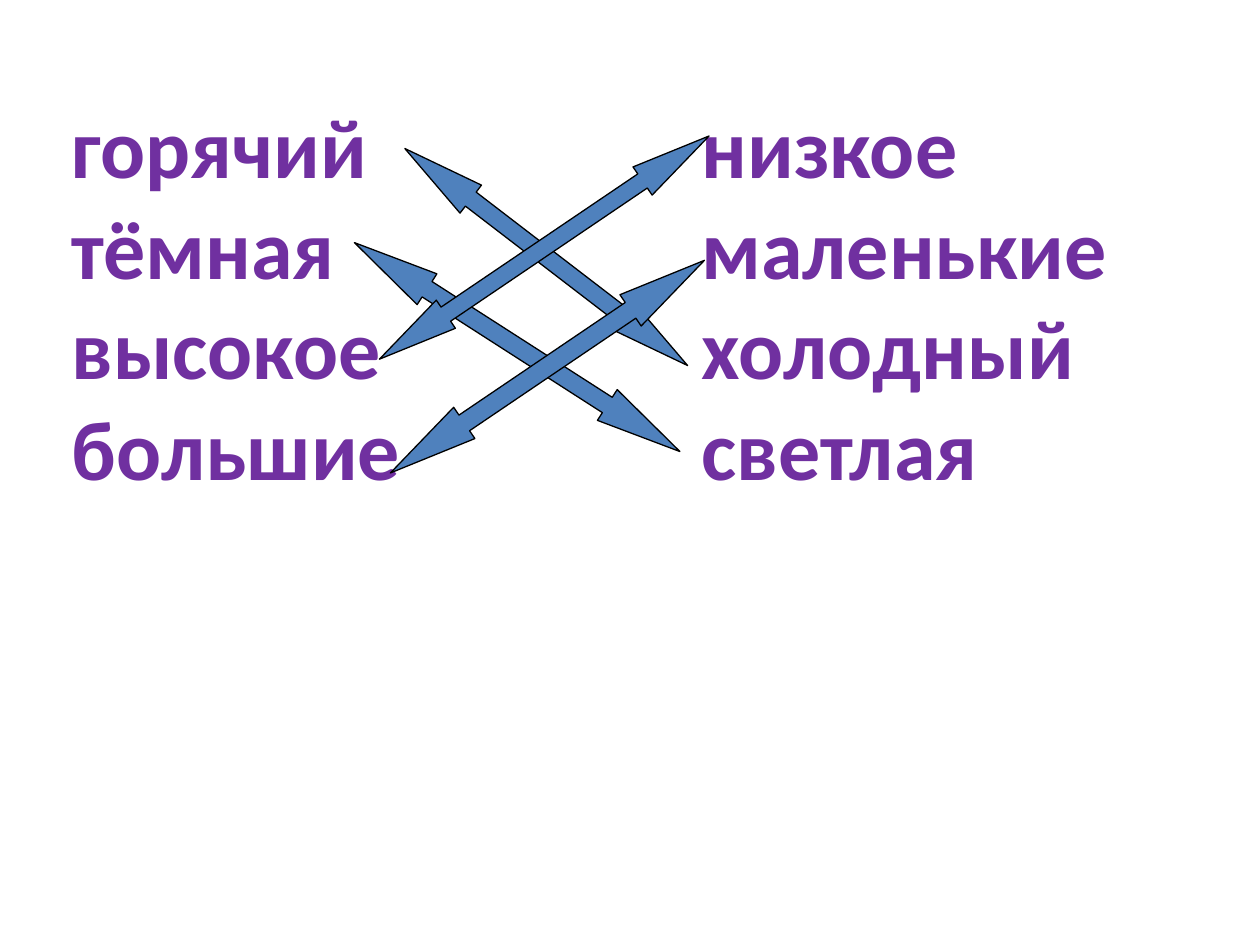
from lxml import etree
from pptx import Presentation
from pptx import util as u
from pptx.dml.color import RGBColor
from pptx.enum import shapes, text
from pptx.oxml.ns import qn

PURPLE = RGBColor(0x70, 0x30, 0xA0)
BLUE = RGBColor(0x4F, 0x81, 0xBD)
BLACK = RGBColor(0, 0, 0)

ANTONYM_ROWS = [
    ("горячий", "низкое"),
    ("тёмная", "маленькие"),
    ("высокое", "холодный"),
    ("большие", "светлая"),
]
MATCHES = [
    (2.92, 1.9, 2.83, 0.28, 37.5),
    (2.57, 2.61, 3.07, 0.29, 32.7),
    (2.74, 1.83, 3.16, 0.27, 325.9),
    (2.84, 2.76, 3.01, 0.3, 325.9),
]


class AntonymSlide:
    font_name = "Calibri"
    font_size = u.Pt(48)
    second_column = u.Inches(5)

    def __init__(self, deck):
        self.slide = deck.slides.add_slide(deck.slide_layouts[6])

    def word_columns(self, left, top, width, height, rows):
        box = self.slide.shapes.add_textbox(
            u.Inches(left), u.Inches(top), u.Inches(width), u.Inches(height)
        )
        words = box.text_frame
        words.word_wrap = True
        words.auto_size = text.MSO_AUTO_SIZE.SHAPE_TO_FIT_TEXT
        for index, pair in enumerate(rows):
            line = words.add_paragraph() if index else words.paragraphs[0]
            stops = etree.SubElement(line._p.get_or_add_pPr(), qn("a:tabLst"))
            etree.SubElement(
                stops, qn("a:tab"), pos=str(self.second_column), algn="l"
            )
            run = line.add_run()
            run.text = "\t".join(pair)
            run.font.name = self.font_name
            run.font.size = self.font_size
            run.font.bold = True
            run.font.color.rgb = PURPLE

    def match_arrow(self, left, top, width, height, angle):
        arrow = self.slide.shapes.add_shape(
            shapes.MSO_SHAPE.LEFT_RIGHT_ARROW,
            u.Inches(left), u.Inches(top), u.Inches(width), u.Inches(height),
        )
        arrow.rotation = angle
        arrow.adjustments[0] = 0.5
        arrow.adjustments[1] = 2.36
        arrow.shadow.inherit = False
        arrow.fill.solid()
        arrow.fill.fore_color.rgb = BLUE
        arrow.line.color.rgb = BLACK
        arrow.line.width = u.Pt(0.75)


def main():
    deck = Presentation()
    deck.slide_width = u.Inches(10)
    deck.slide_height = u.Inches(7.5)
    antonyms = AntonymSlide(deck)
    antonyms.word_columns(0.47, 0.7, 8.67, 3.33, ANTONYM_ROWS)
    for match in MATCHES:
        antonyms.match_arrow(*match)
    deck.save("out.pptx")


if __name__ == "__main__":
    main()
